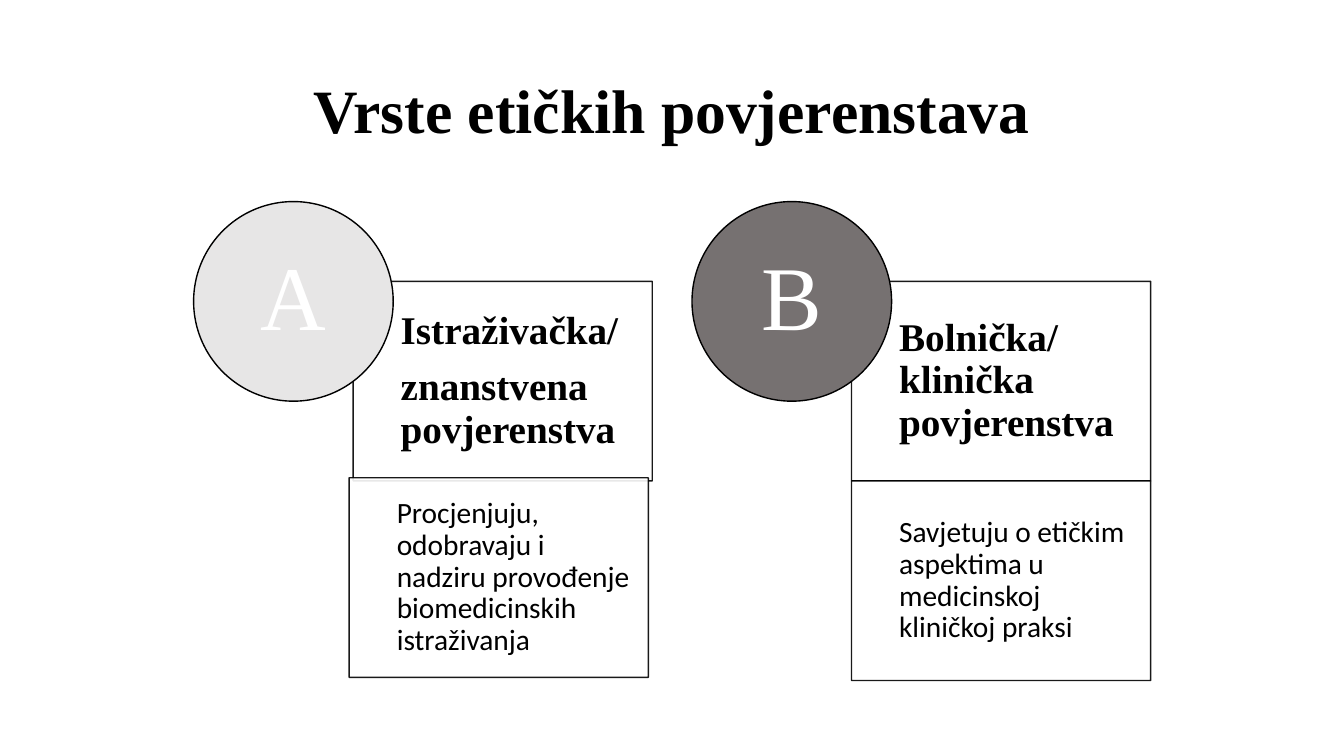
import pptx
import pptx.util
import pptx.dml.color
import pptx.enum.shapes
import pptx.enum.text
import pptx.oxml.ns
import lxml.etree

Cm, Pt = pptx.util.Cm, pptx.util.Pt
SHAPE = pptx.enum.shapes.MSO_SHAPE
ALIGN = pptx.enum.text.PP_ALIGN

TITLE = "Vrste etičkih povjerenstava"
COMMITTEES = [
    {
        "letter": "A",
        "circle_color": "E7E6E6",
        "heading": ["Istraživačka/", "znanstvena povjerenstva"],
        "description": ["Procjenjuju, odobravaju i nadziru provođenje biomedicinskih istraživanja"],
        "description_shift": (-0.1, -0.08),
    },
    {
        "letter": "B",
        "circle_color": "767171",
        "heading": ["Bolnička/ klinička povjerenstva"],
        "description": ["Savjetuju o etičkim aspektima u medicinskoj kliničkoj praksi"],
        "description_shift": (0, 0),
    },
]

THEME = {
    "serif": "Times New Roman",
    "sans": "Calibri",
    "dark": "000000",
    "light": "FFFFFF",
    "title_size": 44,
    "letter_size": 65,
    "heading_size": 28,
    "description_size": 21,
    "line_spacing": 0.9,
    "space_after_share": 0.35,
    "box_opacity": 90,
}

# Lengths in centimetres
TITLE_BOX = (2.33, 1.01, 29.21, 3.68)
CIRCLE_LEFT, CIRCLE_TOP, CIRCLE_SIZE = 4.88, 5.08, 5.03
BOX_WIDTH, BOX_HEIGHT = 7.54, 5.03
BOX_OFFSET_X, BOX_OFFSET_Y = 4.02, 2.01
COLUMN_STEP = 12.56
TEXT_INDENT = 1.2


def color(value):
    return pptx.dml.color.RGBColor.from_string(value)


def write_text(shape, lines, font, size, text_color, bold=False,
               align=ALIGN.LEFT, margins=(0, 0, 0, 0), space_after=0):
    frame = shape.text_frame
    frame.word_wrap = True
    frame.vertical_anchor = pptx.enum.text.MSO_ANCHOR.MIDDLE
    (frame.margin_left, frame.margin_top,
     frame.margin_right, frame.margin_bottom) = [Cm(margin) for margin in margins]
    for index, line in enumerate(lines):
        paragraph = frame.add_paragraph() if index else frame.paragraphs[0]
        paragraph.alignment = align
        paragraph.line_spacing = THEME["line_spacing"]
        paragraph.space_after = Pt(round(size * space_after))
        run = paragraph.add_run()
        run.text = line
        run.font.name = font
        run.font.size = Pt(size)
        run.font.bold = bold
        run.font.color.rgb = color(text_color)


def add_outlined_shape(slide, kind, place, fill_color):
    shape = slide.shapes.add_shape(kind, *[Cm(length) for length in place])
    shape.shadow.inherit = False
    shape.fill.solid()
    shape.fill.fore_color.rgb = color(fill_color)
    shape.line.color.rgb = color(THEME["dark"])
    shape.line.width = Pt(1)
    return shape


def set_opacity(shape, percent):
    """Make both the fill and the outline of the shape partly transparent."""
    qn = pptx.oxml.ns.qn
    for tone in shape._element.spPr.iter(qn("a:srgbClr")):
        lxml.etree.SubElement(tone, qn("a:alpha"), val=str(percent * 1000))


def add_box(slide, left, top, lines, font, size, bold, margin):
    box = add_outlined_shape(slide, SHAPE.RECTANGLE,
                             (left, top, BOX_WIDTH, BOX_HEIGHT), THEME["light"])
    set_opacity(box, THEME["box_opacity"])
    write_text(box, lines, font, size, THEME["dark"], bold,
               margins=(TEXT_INDENT, margin, margin, margin),
               space_after=THEME["space_after_share"])


def add_committee(slide, committee, circle_left):
    left, top = circle_left + BOX_OFFSET_X, CIRCLE_TOP + BOX_OFFSET_Y
    shift_x, shift_y = committee["description_shift"]
    add_box(slide, left, top, committee["heading"],
            THEME["serif"], THEME["heading_size"], True, 0.56)
    add_box(slide, left + shift_x, top + BOX_HEIGHT + shift_y, committee["description"],
            THEME["sans"], THEME["description_size"], False, 0.41)
    circle = add_outlined_shape(slide, SHAPE.OVAL,
                                (circle_left, CIRCLE_TOP, CIRCLE_SIZE, CIRCLE_SIZE),
                                committee["circle_color"])
    write_text(circle, [committee["letter"]], THEME["serif"], THEME["letter_size"],
               THEME["light"], align=ALIGN.CENTER)


def main():
    presentation = pptx.Presentation()
    presentation.slide_width, presentation.slide_height = Cm(33.87), Cm(19.05)
    slide = presentation.slides.add_slide(presentation.slide_layouts[6])
    title = slide.shapes.add_textbox(*[Cm(length) for length in TITLE_BOX])
    write_text(title, [TITLE], THEME["serif"], THEME["title_size"], THEME["dark"],
               bold=True, align=ALIGN.CENTER, margins=(0.25, 0.13, 0.25, 0.13))
    for index, committee in enumerate(COMMITTEES):
        add_committee(slide, committee, CIRCLE_LEFT + index * COLUMN_STEP)
    presentation.save("out.pptx")


if __name__ == "__main__":
    main()
